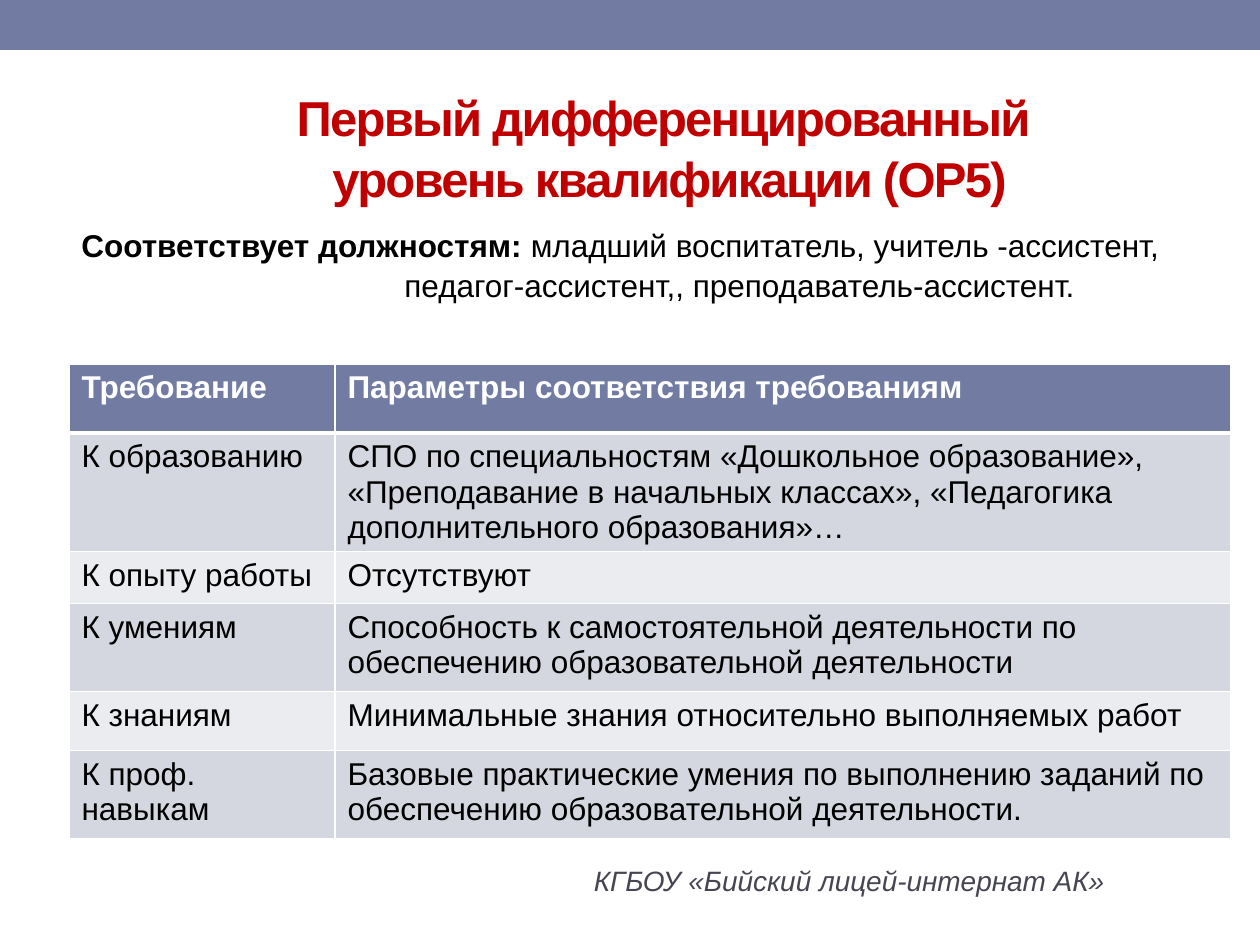
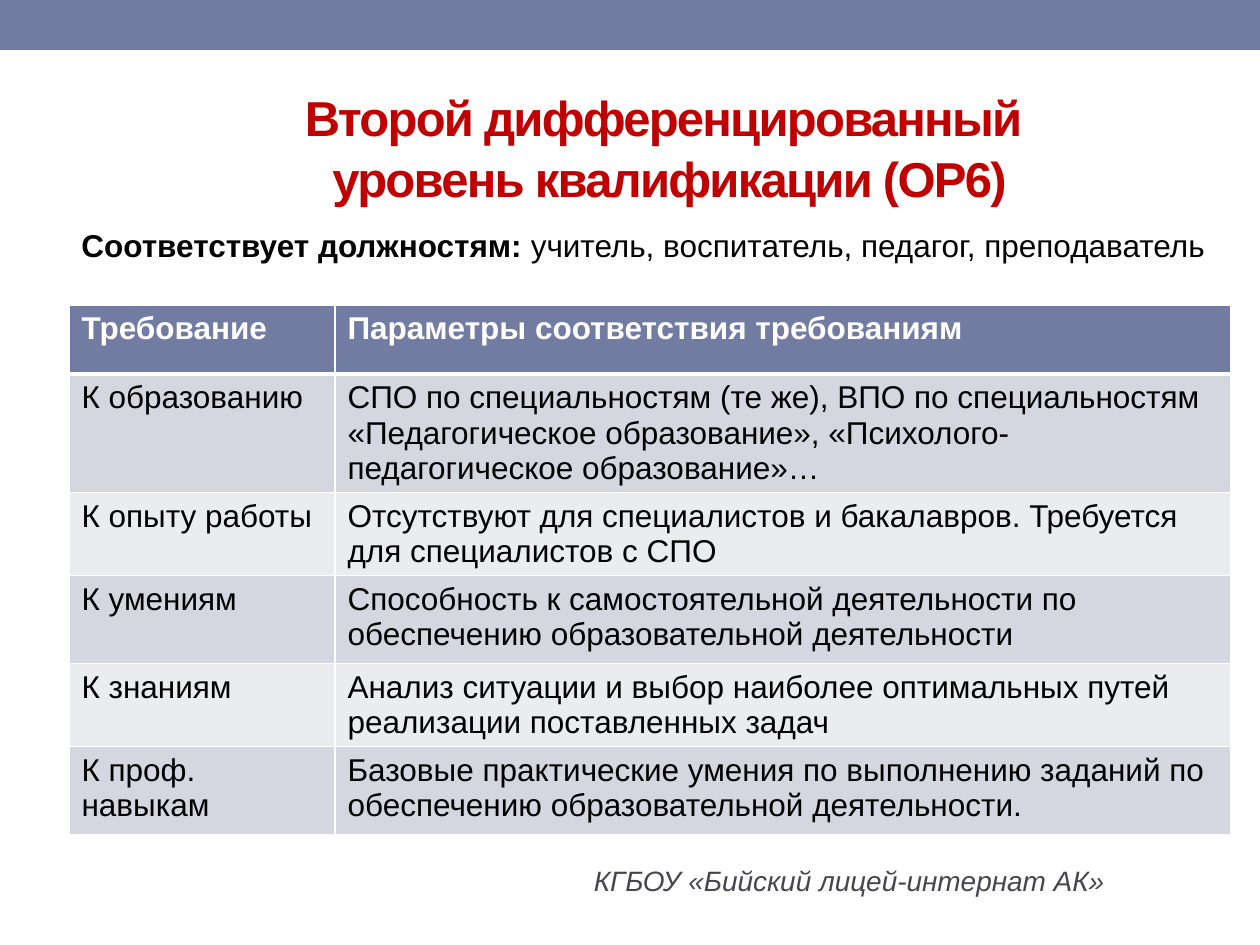
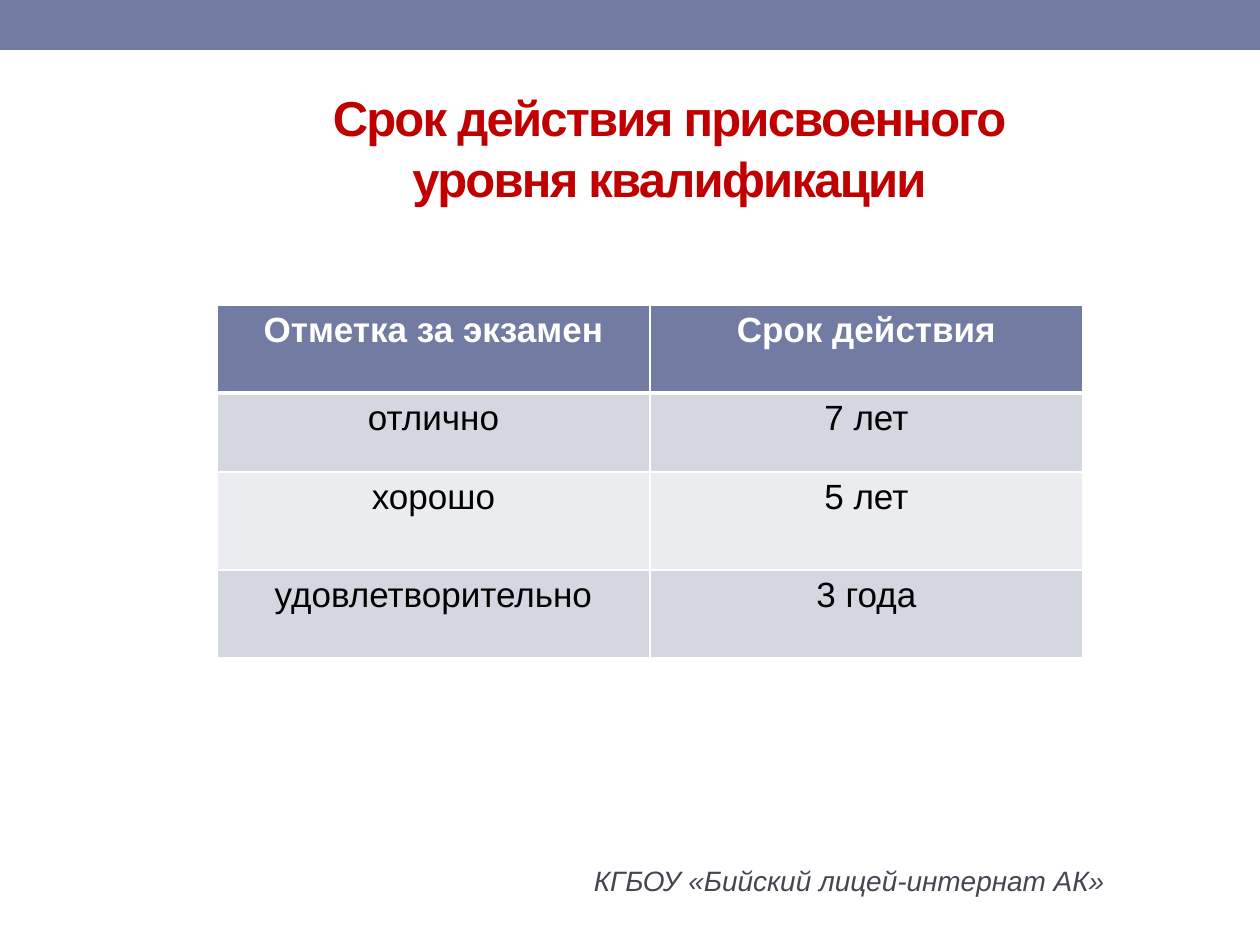
from lxml.etree import SubElement
from pptx import Presentation
from pptx.dml.color import RGBColor
from pptx.enum.shapes import MSO_SHAPE
from pptx.enum.text import MSO_ANCHOR, MSO_AUTO_SIZE, PP_ALIGN
from pptx.oxml.ns import qn
from pptx.util import Pt

WIDE, HIGH = 1260, 945
FONT = "Arial"
BLUE, RED, GREY, WHITE, BLACK = "727CA3", "C00000", "464653", "FFFFFF", "000000"
BANDS = ("D5D7E0", "EBECF0")
FOOTER = "КГБОУ «Бийский лицей-интернат АК»"
LEAD = "Соответствует должностям: "
HEAD = ("Требование", "Параметры соответствия требованиям")
NEEDS = ("К образованию", "К опыту работы", "К умениям", "К знаниям", "К проф. навыкам")
ABLE = "Способность к самостоятельной деятельности по обеспечению образовательной деятельности"
SKILL = "Базовые практические умения по выполнению заданий по обеспечению образовательной деятельности."

LEVEL = dict(left=69, cols=(266, 896), rows=(69, 88, 52, 88, 59, 88), size=18,
             align=PP_ALIGN.LEFT)
TERM = dict(left=217, cols=(433, 433), rows=(88, 79, 98, 88), size=20,
            align=PP_ALIGN.CENTER)

SLIDES = [
    dict(title="Первый дифференцированный \vуровень квалификации (ОР5)",
         jobs=["младший воспитатель, учитель -ассистент,",
               "педагог-ассистент,, преподаватель-ассистент."],
         top=364, grid=LEVEL,
         cells=[HEAD, *zip(NEEDS, (
             "СПО по специальностям «Дошкольное образование», «Преподавание в начальных классах», "
             "«Педагогика дополнительного образования»…",
             "Отсутствуют",
             ABLE,
             "Минимальные знания относительно выполняемых работ",
             SKILL))]),
    dict(title="Второй дифференцированный \vуровень квалификации (ОР6)",
         jobs=["учитель, воспитатель, педагог, преподаватель"],
         top=305, grid=LEVEL,
         cells=[HEAD, *zip(NEEDS, (
             "СПО по специальностям (те же), ВПО по специальностям «Педагогическое образование», "
             "«Психолого-педагогическое образование»…",
             "Отсутствуют для специалистов и бакалавров. Требуется для специалистов с СПО",
             ABLE,
             "Анализ ситуации и выбор наиболее оптимальных путей реализации поставленных задач",
             SKILL))]),
    dict(title="Срок действия присвоенного\vуровня квалификации",
         jobs=[], top=305, grid=TERM,
         cells=[("Отметка за экзамен", "Срок действия"),
                ("отлично", "7 лет"), ("хорошо", "5 лет"), ("удовлетворительно", "3 года")]),
]


def px(num):
    return round(num * 914400 / 126)


def paint(code):
    return RGBColor.from_string(code)


def style(font, size, code, bold=False, italic=False):
    font.name, font.size, font.bold, font.italic = FONT, Pt(size), bold, italic
    font.color.rgb = paint(code)


def add_box(slide, *area):
    box = slide.shapes.add_textbox(*map(px, area))
    box.text_frame.word_wrap = True
    return box


def set_up(deck, layout):
    look = deck.slide_master.element.find(".//" + qn("p:titleStyle")).find(
        qn("a:lvl1pPr")).find(qn("a:defRPr"))
    look.set("sz", "2800")
    look.set("spc", "-100")
    title = layout.placeholders[0]
    title.left, title.top, title.width, title.height = map(px, (118, 78, 1103, 136))


def add_frame(slide, layout):
    band = slide.shapes.add_shape(MSO_SHAPE.RECTANGLE, 0, 0, px(WIDE), px(50))
    band.shadow.inherit = False
    band.fill.solid()
    band.fill.fore_color.rgb = paint(BLUE)
    band.line.fill.background()
    foot = add_box(slide, 493, 857, 624, 47)
    para = foot.text_frame.paragraphs[0]
    para.text, para.alignment = FOOTER, PP_ALIGN.RIGHT
    style(para.font, 16, GREY, italic=True)
    for num, part in enumerate((band, foot), 20):
        next(part.element.iter(qn("p:cNvPr"))).set("id", str(num))
        layout.shapes.element.append(part.element)


def add_title(slide, text):
    frame = slide.shapes.title.text_frame
    frame.text = text
    frame.auto_size = MSO_AUTO_SIZE.NONE
    frame.vertical_anchor = MSO_ANCHOR.MIDDLE
    para = frame.paragraphs[0]
    para.alignment, para.line_spacing = PP_ALIGN.CENTER, 1.04
    style(para.font, 28, RED, bold=True)


def add_jobs(slide, jobs):
    frame = add_box(slide, 69, 217, 1191, 50 + 39 * (len(jobs) - 1)).text_frame
    for num, text in enumerate(jobs):
        para = frame.add_paragraph() if num else frame.paragraphs[0]
        para.line_spacing = 1.07
        if num:
            para.font.size = Pt(18)
            next(para.font._element.iterancestors(qn("a:pPr"))).set("marL", str(px(323)))
        for bold, words in ((True, "" if num else LEAD), (False, text)):
            if words:
                run = para.add_run()
                run.text = words
                style(run.font, 18, BLACK, bold)


def edge(cell, row):
    props = cell._tc.get_or_add_tcPr()
    wide = {"lnT": 3 if row == 1 else 1, "lnB": 1 if row else 3}
    for num, side in enumerate(("lnL", "lnR", "lnT", "lnB")):
        line = SubElement(props, qn("a:" + side), w=str(Pt(wide.get(side, 1))))
        fill = SubElement(line, qn("a:solidFill"))
        SubElement(fill, qn("a:srgbClr"), val=WHITE)
        props.insert(num, line)


def add_grid(slide, top, cells, grid):
    cols, rows = grid["cols"], grid["rows"]
    area = map(px, (grid["left"], top, sum(cols), sum(rows)))
    table = slide.shapes.add_table(len(rows), len(cols), *area).table
    for col, wide in zip(table.columns, cols):
        col.width = px(wide)
    for num, high in enumerate(rows):
        table.rows[num].height = px(high)
        for cell, text in zip(table.rows[num].cells, cells[num]):
            cell.text = text
            cell.fill.solid()
            cell.fill.fore_color.rgb = paint(BANDS[(num - 1) % 2] if num else BLUE)
            para = cell.text_frame.paragraphs[0]
            para.alignment = grid["align"]
            style(para.font, grid["size"], BLACK if num else WHITE, bold=not num)
            edge(cell, num)


def main():
    deck = Presentation()
    deck.slide_width, deck.slide_height = px(WIDE), px(HIGH)
    layout = deck.slide_layouts[5]
    set_up(deck, layout)
    for num, item in enumerate(SLIDES):
        slide = deck.slides.add_slide(layout)
        if not num:
            add_frame(slide, layout)
        add_title(slide, item["title"])
        add_grid(slide, item["top"], item["cells"], item["grid"])
        if item["jobs"]:
            add_jobs(slide, item["jobs"])
    deck.save("out.pptx")


if __name__ == "__main__":
    main()
